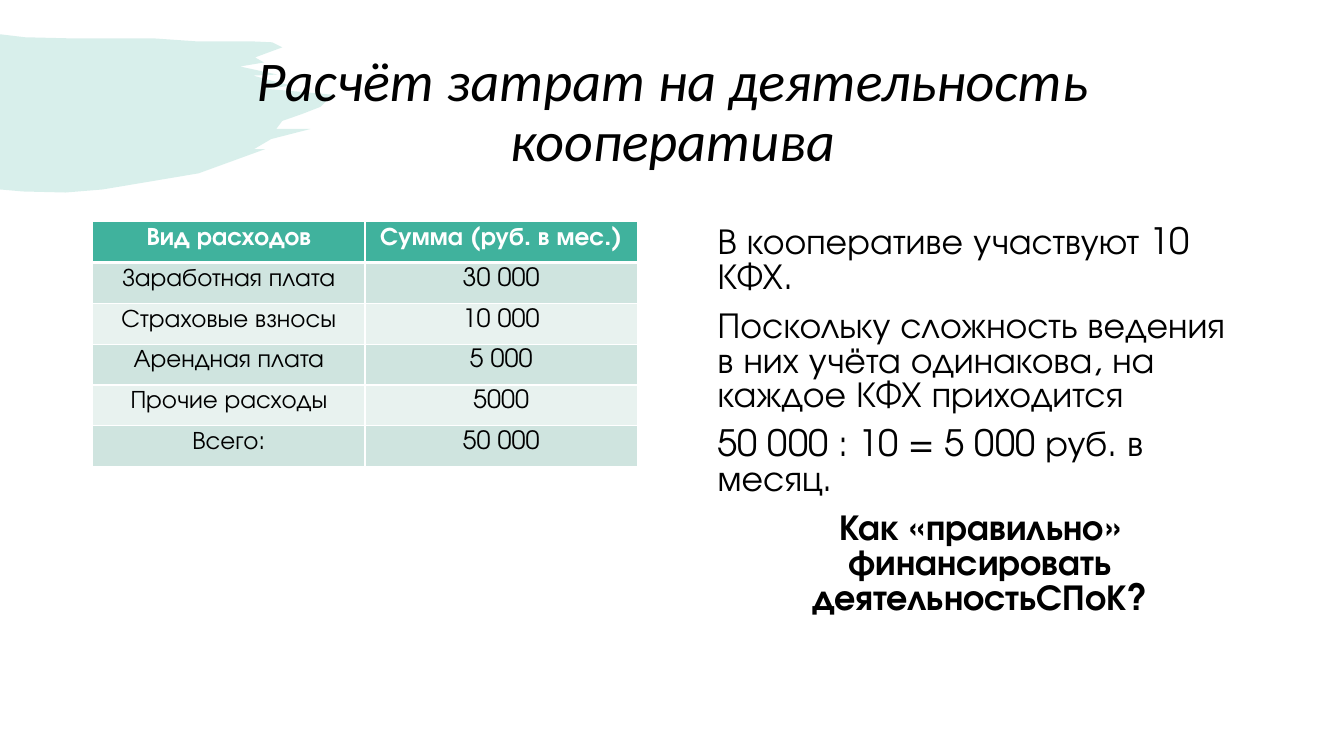
from dataclasses import dataclass

from lxml.etree import SubElement
from pptx import Presentation
from pptx.dml.color import RGBColor
from pptx.enum.text import MSO_ANCHOR, PP_ALIGN
from pptx.oxml.ns import qn
from pptx.util import Inches, Pt

TEAL = RGBColor(0x40, 0xB2, 0x9D)
DARK = RGBColor(0xCF, 0xE4, 0xDF)
PALE = RGBColor(0xE8, 0xF2, 0xEF)
WHITE = RGBColor(0xFF, 0xFF, 0xFF)
BLACK = RGBColor(0x00, 0x00, 0x00)
FONT = "TeX Gyre Adventor"


@dataclass
class Line:
    text: str
    size: float
    align: PP_ALIGN = PP_ALIGN.LEFT
    font: str = FONT
    color: RGBColor = BLACK
    bold: bool = False
    italic: bool = False
    pitch: float = 1.0
    before: float = 0


COSTS = [
    ("Вид расходов", "Сумма (руб. в мес.)"),
    ("Заработная плата", "30 000"),
    ("Страховые взносы", "10 000"),
    ("Арендная плата", "5 000"),
    ("Прочие расходы", "5000"),
    ("Всего:", "50 000"),
]

TITLE = Line("Расчёт затрат на деятельность кооператива", 40, PP_ALIGN.CENTER,
             "Calibri", italic=True, pitch=0.9)
NOTES = [Line(text, 25.9, pitch=0.8, before=10) for text in (
    "В кооперативе участвуют 10 КФХ.",
    "Поскольку сложность ведения в них учёта одинакова, на каждое КФХ приходится",
    "50 000 : 10 = 5 000 руб. в месяц.",
)]
NOTES.append(Line("Как «правильно» финансировать деятельностьСПоК?", 25.9,
                  PP_ALIGN.CENTER, bold=True, pitch=0.8, before=10))

# Brush stroke outline in hundredths of an inch, clockwise from the top left
STROKE = [
    (0, 34), (25, 37), (66, 38), (151, 38), (194, 41), (248, 41), (270, 42),
    (280, 47), (253, 57), (262, 62), (238, 66), (275, 74), (251, 75),
    (273, 81), (290, 85), (263, 88), (330, 94), (318, 106), (300, 113),
    (280, 120), (274, 128), (308, 128), (269, 138), (252, 148), (263, 148),
    (197, 172), (102, 188), (65, 191), (23, 190), (0, 188),
]


def draw_brush(slide) -> None:
    pen = slide.shapes.build_freeform(*STROKE[0], scale=Inches(0.01))
    pen.add_line_segments(STROKE[1:], close=True)
    brush = pen.convert_to_shape()
    brush.shadow.inherit = False
    brush.line.fill.background()
    brush.fill.solid()
    brush.fill.fore_color.rgb = TEAL
    color = brush.element.spPr.find(qn("a:solidFill"))[0]
    SubElement(color, qn("a:alpha"), val="20000")


def write(para, line: Line) -> None:
    para.text = line.text
    para.alignment = line.align
    para.line_spacing = line.pitch
    para.space_before = Pt(line.before)
    font = para.runs[0].font
    font.name, font.size = line.font, Pt(line.size)
    font.bold, font.italic = line.bold, line.italic
    font.color.rgb = line.color


def draw_text(slide, box: tuple, lines: list, anchor: MSO_ANCHOR) -> None:
    frame = slide.shapes.add_textbox(*map(Inches, box)).text_frame
    frame.word_wrap = True
    frame.vertical_anchor = anchor
    for i, line in enumerate(lines):
        write(frame.add_paragraph() if i else frame.paragraphs[0], line)


def set_edge(cell, side: str, width: float) -> None:
    props = cell._tc.get_or_add_tcPr()
    edge = SubElement(props, qn(f"a:ln{side}"), w=str(Pt(width)))
    fill = SubElement(edge, qn("a:solidFill"))
    SubElement(fill, qn("a:srgbClr"), val=str(WHITE))


def draw_table(slide) -> None:
    box = map(Inches, (0.92, 2.2, 5.4, 2.43))
    table = slide.shapes.add_table(len(COSTS), 2, *box).table
    for r, row in enumerate(COSTS):
        head = r == 0
        for c, text in enumerate(row):
            cell = table.cell(r, c)
            cell.margin_left = cell.margin_right = Inches(0.05)
            cell.margin_top = cell.margin_bottom = Inches(0.05)
            for side in "LRTB":
                thick = (r, side) in ((0, "B"), (1, "T"))
                set_edge(cell, side, 3 if thick else 1)
            cell.fill.solid()
            cell.fill.fore_color.rgb = TEAL if head else DARK if r % 2 else PALE
            write(cell.text_frame.paragraphs[0],
                  Line(text, 18, PP_ALIGN.CENTER, bold=head,
                       color=WHITE if head else BLACK))


def main() -> None:
    deck = Presentation()
    deck.slide_width, deck.slide_height = Inches(13.33), Inches(7.5)
    slide = deck.slides.add_slide(deck.slide_layouts[6])
    draw_brush(slide)
    draw_text(slide, (0.92, 0.4, 11.5, 1.45), [TITLE], MSO_ANCHOR.MIDDLE)
    draw_table(slide)
    draw_text(slide, (7.02, 2.2, 5.4, 4.55), NOTES, MSO_ANCHOR.TOP)
    deck.save("out.pptx")


if __name__ == "__main__":
    main()
